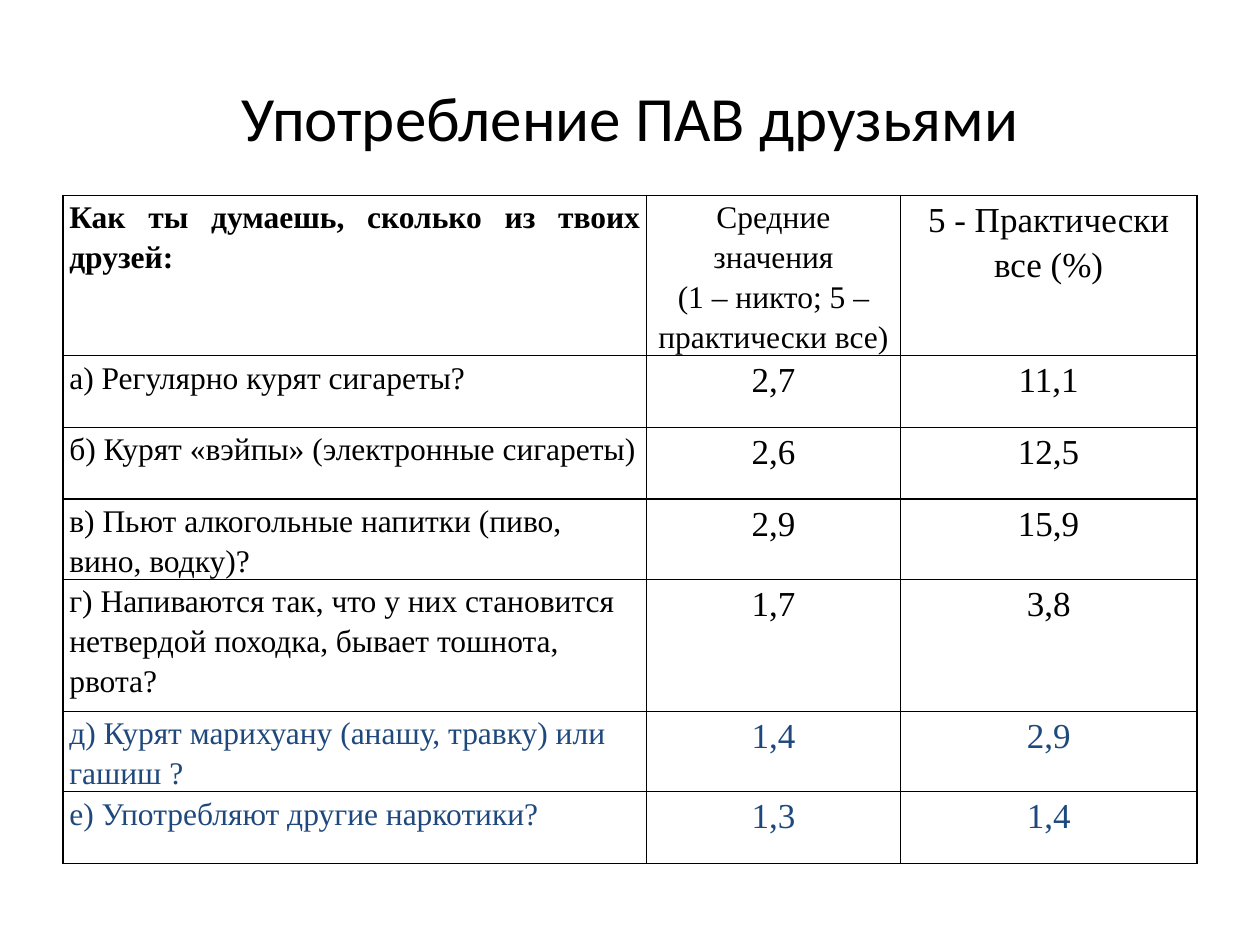
from lxml.etree import SubElement
from pptx import Presentation
from pptx.dml.color import RGBColor
from pptx.enum.text import MSO_ANCHOR as Anchor, PP_ALIGN as Align
from pptx.oxml.ns import qn
from pptx.util import Pt

BLACK, BLUE = "000000", "1F497D"
COLUMN_WIDTHS = [333.5, 145, 169.5]
ROW_HEIGHTS = [41, 41, 41, 41, 75.5, 41, 41]
HEADINGS = [
    "Как ты думаешь, сколько из твоих друзей: ",
    "Средние значения\n(1 – никто; 5 – практически все)",
    "5 - Практически все (%)",
]
ANSWERS = [
    ("а) Регулярно курят сигареты?", "2,7", "11,1", BLACK),
    ("б) Курят «вэйпы» (электронные сигареты)", "2,6", "12,5", BLACK),
    ("в) Пьют алкогольные напитки (пиво, вино, водку)?", "2,9", "15,9", BLACK),
    ("г) Напиваются так, что у них становится нетвердой походка, "
     "бывает тошнота, рвота?", "1,7", "3,8", BLACK),
    ("д) Курят марихуану (анашу, травку) или гашиш ?", "1,4", "2,9", BLUE),
    ("е) Употребляют другие наркотики?", "1,3", "1,4", BLUE),
]


def rgb(value):
    """Return the colour for a hex string."""
    return RGBColor.from_string(value)


def format_text(frame, font_name, size, color, align, bold=False, spacing=None):
    """Format every paragraph and run of a text frame."""
    for paragraph in frame.paragraphs:
        paragraph.alignment = align
        paragraph.line_spacing = spacing
        for run in paragraph.runs:
            run.font.name = font_name
            run.font.size = Pt(size)
            run.font.bold = bold
            run.font.color.rgb = rgb(color)


def draw_borders(cell, color, width):
    """Give a cell a solid line on all four sides."""
    properties = cell._tc.get_or_add_tcPr()
    for side in ("a:lnL", "a:lnR", "a:lnT", "a:lnB"):
        border = SubElement(properties, qn(side), w=str(Pt(width)))
        fill = SubElement(border, qn("a:solidFill"))
        SubElement(fill, qn("a:srgbClr"), val=color)


def fill_cell(cell, text, size, color, align, bold=False):
    """Write one table cell with its borders and text format."""
    draw_borders(cell, BLACK, 1)
    cell.fill.background()
    cell.margin_left = cell.margin_right = Pt(3.6)
    cell.margin_top = cell.margin_bottom = 0
    cell.text_frame.text = text
    format_text(cell.text_frame, "Times New Roman", size, color, align, bold, 1.15)


def place_title(slide, left, top, width, height):
    """Place the heading in the title placeholder."""
    title = slide.shapes.title
    title.left, title.top = Pt(left), Pt(top)
    title.width, title.height = Pt(width), Pt(height)
    title.text_frame.text = "Употребление ПАВ друзьями"
    title.text_frame.vertical_anchor = Anchor.MIDDLE
    format_text(title.text_frame, "Calibri", 36, BLACK, Align.CENTER)


def place_survey(slide, left, top, width, height):
    """Place the survey table in the given box."""
    survey = slide.shapes.add_table(
        len(ROW_HEIGHTS), len(COLUMN_WIDTHS), Pt(left), Pt(top), Pt(width), Pt(height)
    ).table
    survey.first_row = survey.horz_banding = False
    for column, share in zip(survey.columns, COLUMN_WIDTHS):
        column.width = Pt(width * share / sum(COLUMN_WIDTHS))
    for row, share in zip(survey.rows, ROW_HEIGHTS):
        row.height = Pt(height * share / sum(ROW_HEIGHTS))

    question, average, nearly_all = HEADINGS
    fill_cell(survey.cell(0, 0), question, 18, BLACK, Align.JUSTIFY, bold=True)
    fill_cell(survey.cell(0, 1), average, 18, BLACK, Align.CENTER)
    fill_cell(survey.cell(0, 2), nearly_all, 20, BLACK, Align.CENTER)
    for index, (answer, mean, percent, color) in enumerate(ANSWERS, start=1):
        fill_cell(survey.cell(index, 0), answer, 18, color, Align.LEFT)
        fill_cell(survey.cell(index, 1), mean, 20, color, Align.CENTER)
        fill_cell(survey.cell(index, 2), percent, 20, color, Align.CENTER)


def main():
    """Build and save the slide."""
    deck = Presentation()
    deck.slide_width, deck.slide_height = Pt(720), Pt(540)
    slide = deck.slides.add_slide(deck.slide_layouts[5])
    place_title(slide, 36, 21.6, 648, 90)
    place_survey(slide, 36, 111.6, 648, sum(ROW_HEIGHTS))
    deck.save("out.pptx")


if __name__ == "__main__":
    main()
